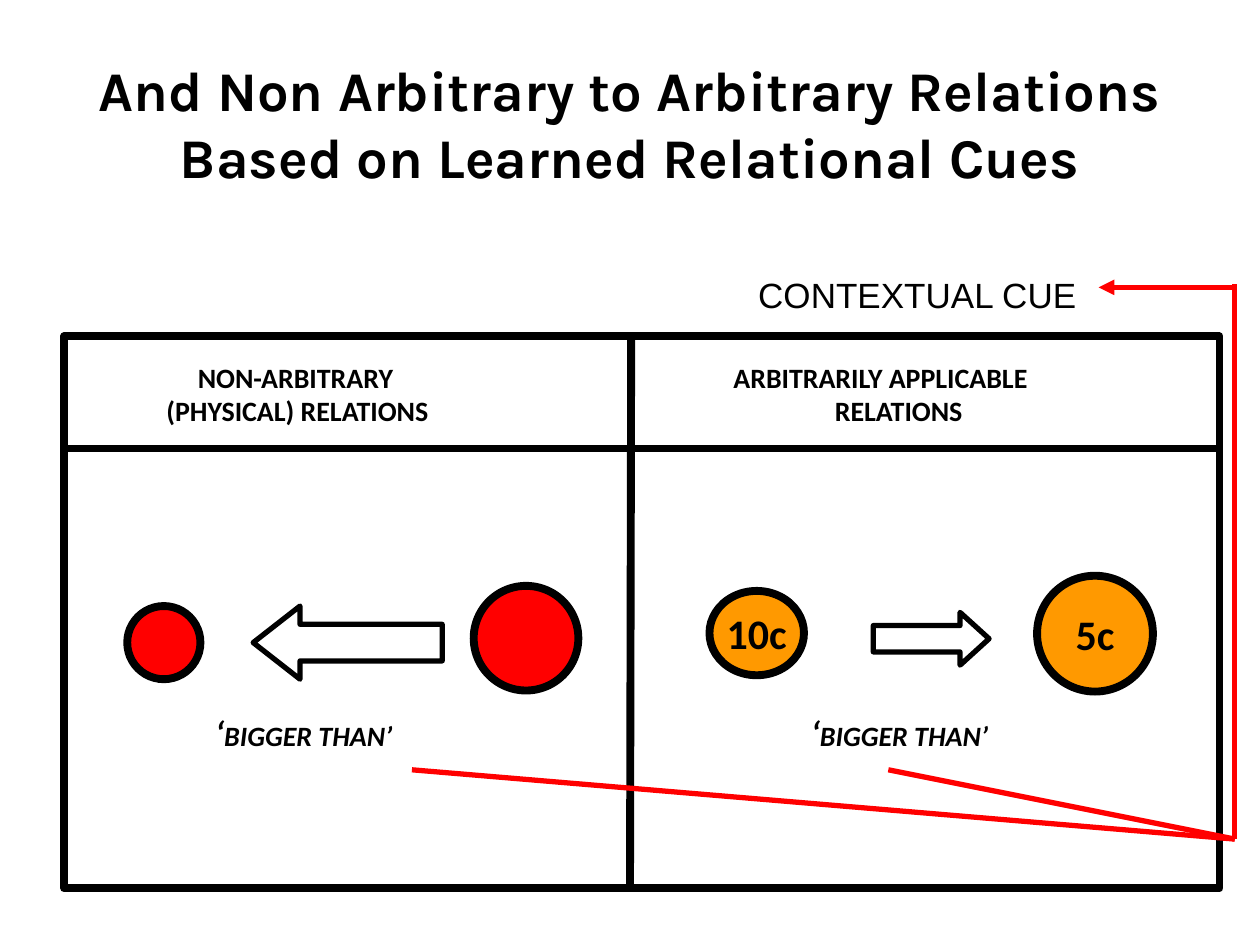
from dataclasses import dataclass

from lxml.etree import SubElement
from pptx import Presentation
from pptx.dml.color import RGBColor
from pptx.enum.shapes import MSO_CONNECTOR, MSO_SHAPE
from pptx.enum.text import MSO_ANCHOR, PP_ALIGN
from pptx.oxml.ns import qn
from pptx.util import Pt


@dataclass(frozen=True)
class Theme:
    black: RGBColor = RGBColor(0, 0, 0)
    white: RGBColor = RGBColor(255, 255, 255)
    red: RGBColor = RGBColor(255, 0, 0)
    orange: RGBColor = RGBColor(255, 153, 0)
    title_font: str = "Karla"
    body_font: str = "Calibri"
    cue_font: str = "Arial"
    title_size: int = 32
    coin_size: int = 24
    cue_size: int = 20
    label_size: int = 16
    heavy: float = 4.5
    medium: float = 3


class SlideBuilder:
    def __init__(self, slide, theme):
        self.slide = slide
        self.theme = theme

    def style(self, paragraph, size, font=None, bold=True, align=PP_ALIGN.LEFT):
        paragraph.alignment = align
        paragraph.font.name = font or self.theme.body_font
        paragraph.font.size = Pt(size)
        paragraph.font.bold = bold
        paragraph.font.color.rgb = self.theme.black

    def text(self, box, lines, size, indents=(), anchor=MSO_ANCHOR.TOP, **style):
        """Add a text box with one paragraph per line; return its paragraphs."""
        frame = self.slide.shapes.add_textbox(*map(Pt, box)).text_frame
        frame.word_wrap = True
        frame.vertical_anchor = anchor
        frame.text = "\n".join(lines)
        for paragraph in frame.paragraphs:
            self.style(paragraph, size, **style)
        for paragraph, indent in zip(frame.paragraphs, indents):
            paragraph._p.get_or_add_pPr().set("marL", str(Pt(indent)))
        return frame.paragraphs

    def relation(self, box, align):
        """Add the relational cue, whose opening quote is larger."""
        theme = self.theme
        paragraph = self.text(box, ["‘"], theme.label_size, align=align)[0]
        paragraph.font.italic = True
        paragraph.runs[0].font.size = Pt(theme.cue_size)
        paragraph.add_run().text = "BIGGER THAN’"

    def shape(self, kind, box, fill, weight, label=None, head=None):
        shape = self.slide.shapes.add_shape(kind, *map(Pt, box))
        shape.shadow.inherit = False
        shape.fill.solid()
        shape.fill.fore_color.rgb = fill
        shape.line.color.rgb = self.theme.black
        shape.line.width = Pt(weight)
        if head:
            shape.adjustments[1] = head
        if label:
            frame = shape.text_frame
            frame.text = label
            frame.word_wrap = False
            frame.vertical_anchor = MSO_ANCHOR.MIDDLE
            self.style(frame.paragraphs[0], self.theme.coin_size, align=PP_ALIGN.CENTER)

    def line(self, start, end, color, weight, arrow=False):
        connector = self.slide.shapes.add_connector(
            MSO_CONNECTOR.STRAIGHT, *map(Pt, (*start, *end)))
        connector.line.color.rgb = color
        connector.line.width = Pt(weight)
        if arrow:
            SubElement(connector.line._get_or_add_ln(), qn("a:tailEnd"), type="triangle")
        SubElement(connector._element.spPr, qn("a:effectLst"))


def main():
    presentation = Presentation()
    presentation.slide_width, presentation.slide_height = Pt(720), Pt(540)
    theme = Theme()
    slide = presentation.slides.add_slide(presentation.slide_layouts[6])
    builder = SlideBuilder(slide, theme)

    # Two-column frame
    left, top, width, height = 36.7, 192.2, 660.2, 315.4
    builder.shape(MSO_SHAPE.RECTANGLE, (left, top, width, height), theme.white, theme.heavy)
    builder.line((360.7, 190.8), (360, 508.3), theme.black, theme.heavy)
    builder.line((left, 256.3), (left + width, 256.3), theme.black, theme.heavy)

    # Column headings
    builder.text((85, 202.3, 228.2, 46), ["NON-ARBITRARY", "(PHYSICAL) RELATIONS"],
                 theme.label_size, indents=(21, 3))
    builder.text((409, 202.3, 264.2, 46), ["ARBITRARILY APPLICABLE", "RELATIONS"],
                 theme.label_size, indents=(3, 61))

    # Circles: physical sizes on the left, coin values on the right
    for x, y, w, h, fill, label in (
        (72.7, 346.3, 41.8, 41.8, theme.red, None),
        (270.7, 334.8, 59.8, 59.8, theme.red, None),
        (405.4, 337.7, 54, 48.2, theme.orange, "10c"),
        (592.6, 329, 66.2, 66.2, theme.orange, "5c"),
    ):
        builder.shape(MSO_SHAPE.OVAL, (x, y, w, h), fill, theme.heavy, label)

    # Block arrows between the circles
    builder.shape(MSO_SHAPE.LEFT_ARROW, (144.7, 346.3, 108, 41.8),
                  theme.white, theme.medium, head=0.64)
    builder.shape(MSO_SHAPE.RIGHT_ARROW, (499, 349.9, 66.2, 30.2),
                  theme.white, theme.medium, head=0.55)

    # Relational cues
    builder.relation((115.9, 403.2, 187.2, 31.7), PP_ALIGN.LEFT)
    builder.relation((427.7, 403.2, 172.8, 31.7), PP_ALIGN.CENTER)

    # Title and contextual cue
    builder.text((0, 45.4, 720, 49),
                 ["And Non Arbitrary to Arbitrary Relations", "Based on Learned Relational Cues"],
                 theme.title_size, anchor=MSO_ANCHOR.MIDDLE,
                 font=theme.title_font, align=PP_ALIGN.CENTER)
    builder.text((390.2, 152.6, 233.3, 28.8), ["CONTEXTUAL CUE"], theme.cue_size,
                 indents=(36,), font=theme.cue_font, bold=False)

    # Red path from both relational cues up to the contextual cue
    corner = (705.6, 479.5)
    for start in ((235.4, 439.9), (507.6, 439.9)):
        builder.line(start, corner, theme.red, theme.medium)
    builder.line(corner, (705.6, 162), theme.red, theme.medium)
    builder.line((705.6, 164.2), (627.8, 164.2), theme.red, theme.medium, arrow=True)

    presentation.save("out.pptx")


if __name__ == "__main__":
    main()
